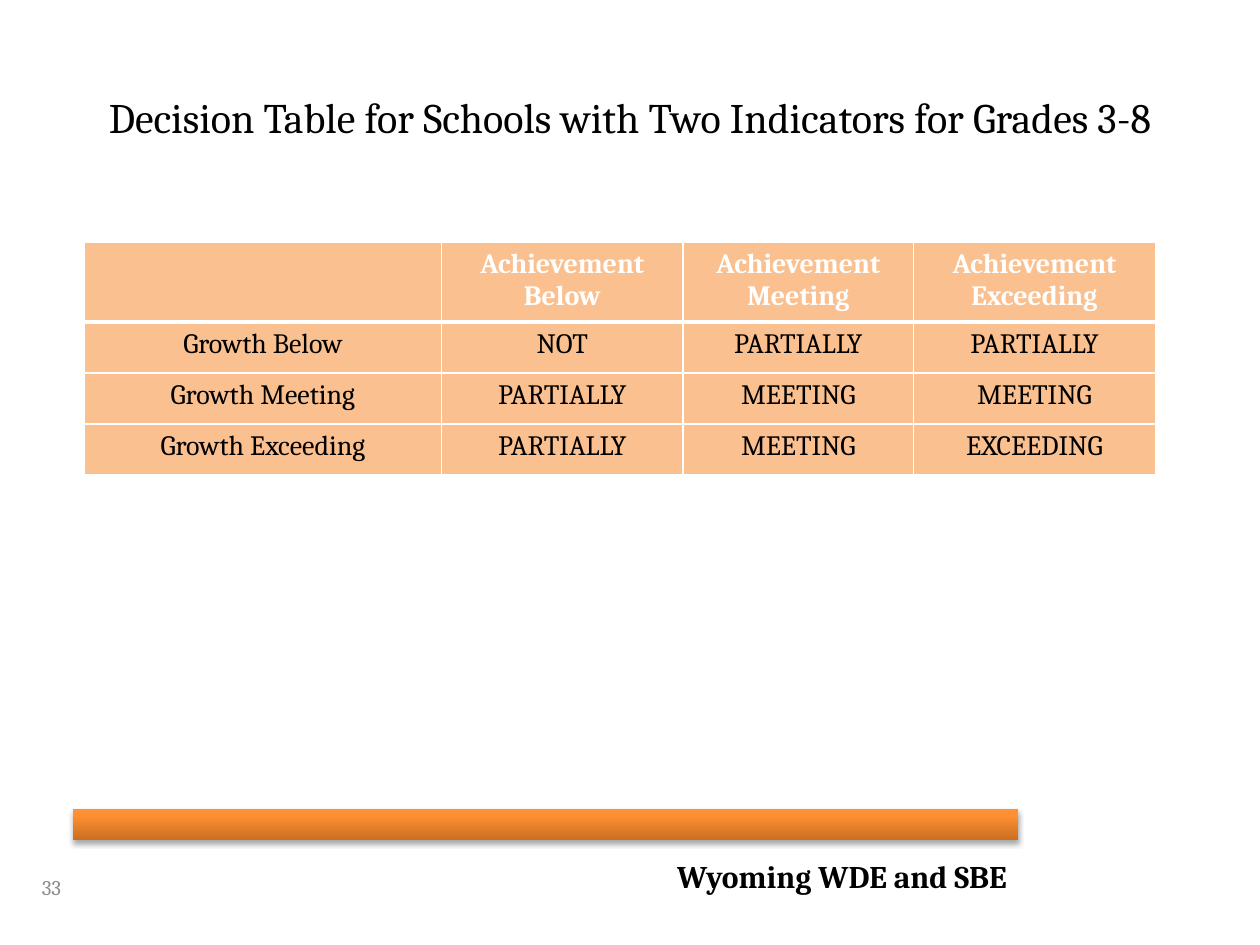
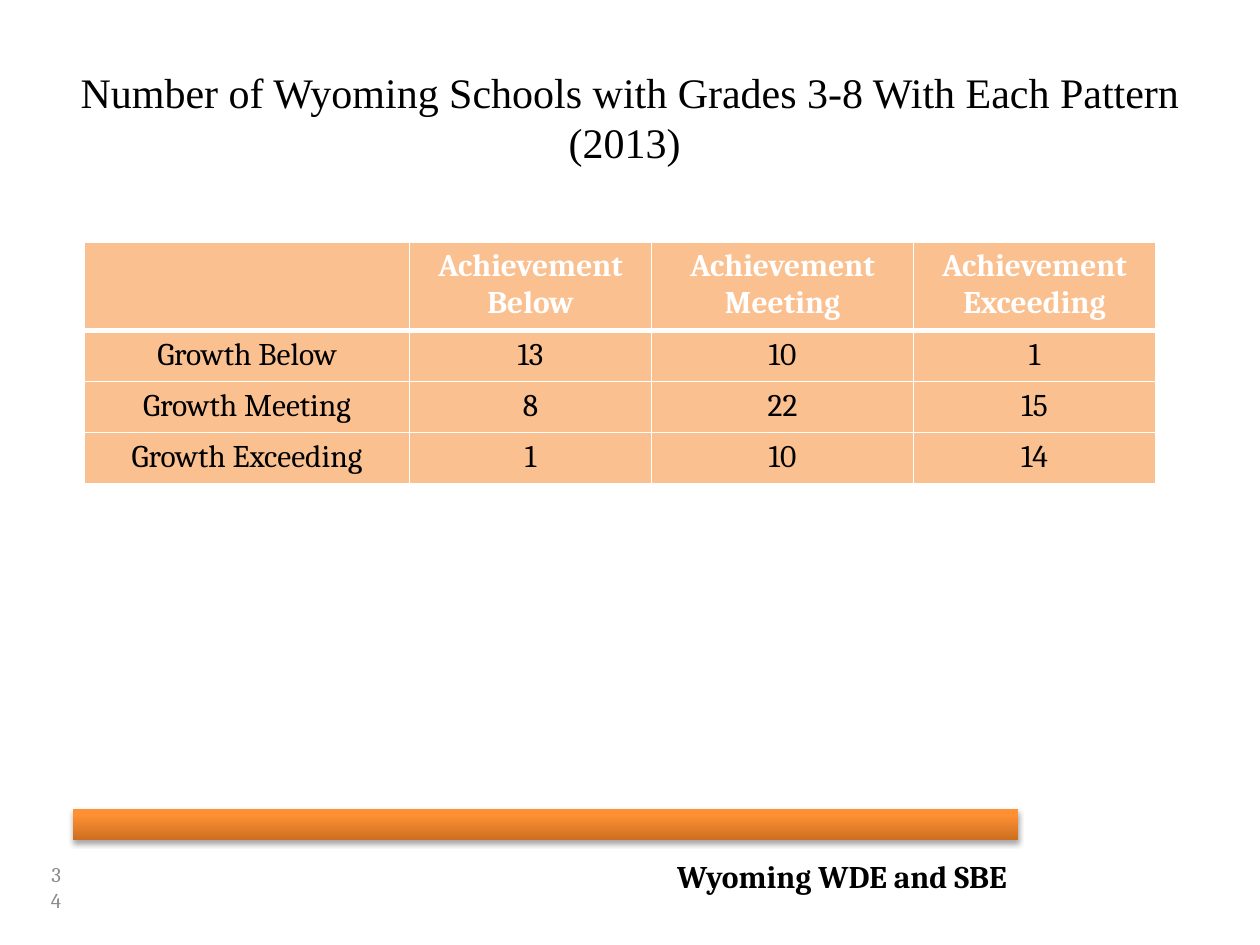
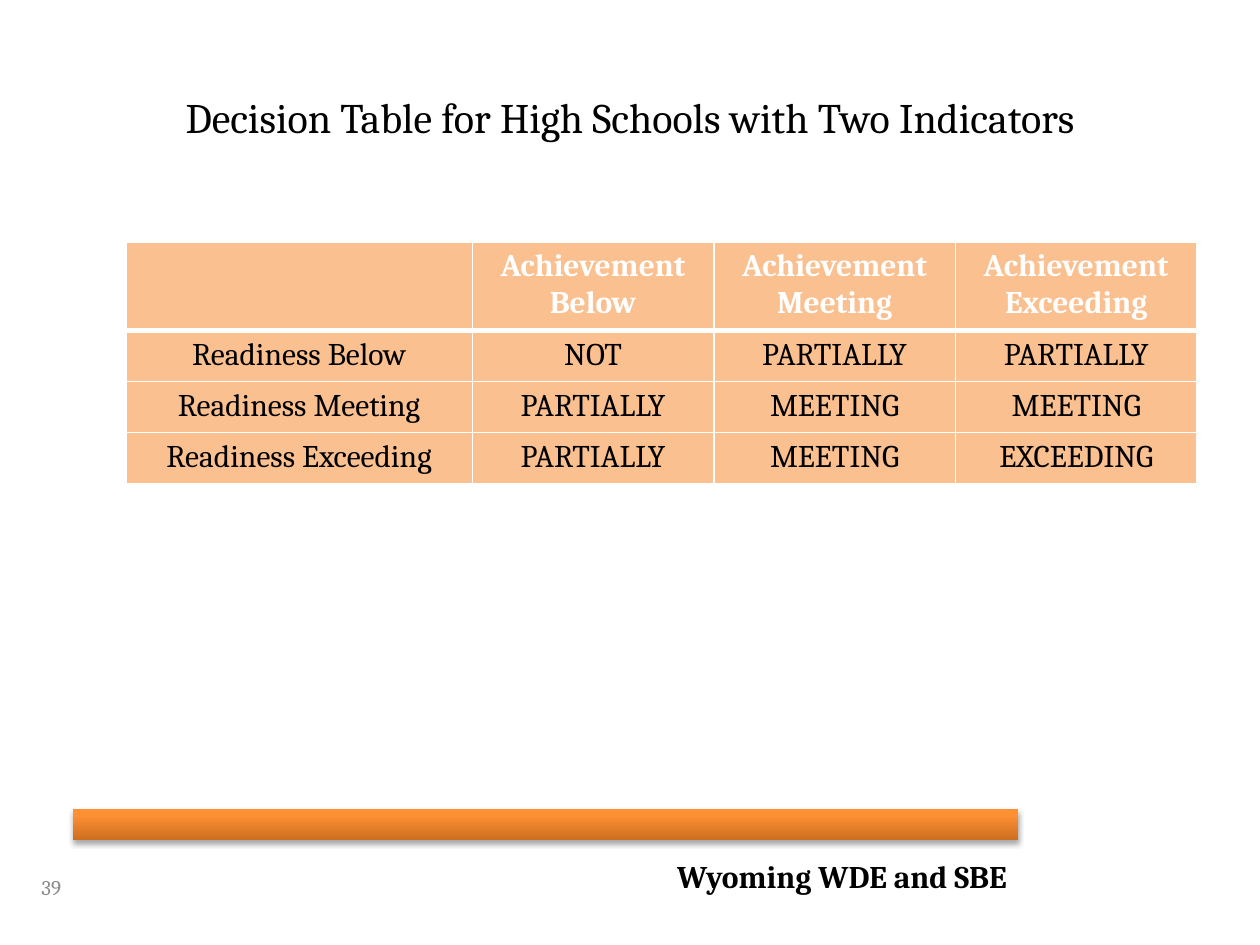
from pptx import Presentation
from pptx.dml.color import RGBColor
from pptx.enum.shapes import MSO_SHAPE as Preset
from pptx.enum.text import MSO_ANCHOR as Anchor, PP_ALIGN as Align
from pptx.oxml import parse_xml
from pptx.util import Cm, Pt

COLOURS = {
    "text": "000000", "number": "8C8C8C", "heading": "FFFFFF",
    "border": "FFFFFF", "cell": "FAC090",
    "bar_low": "CC6E20", "bar_mid": "FF9034", "bar_high": "FF9136",
    "shadow": "000000",
}
FONT = "Cambria"
FOOTER = "Wyoming WDE and SBE"
LEVELS = ["Below", "Meeting", "Exceeding"]
DECISIONS = [
    ["NOT", "PARTIALLY", "PARTIALLY"],
    ["PARTIALLY", "MEETING", "MEETING"],
    ["PARTIALLY", "MEETING", "EXCEEDING"],
]
SCHOOL_COUNTS = [["13", "10", "1"], ["8", "22", "15"], ["1", "10", "14"]]

SLIDES = [
    {"title": "Decision Table for Schools with Two Indicators for Grades 3-8",
     "title_font": FONT, "number": "33", "number_wraps": False,
     "indicator": "Growth", "results": DECISIONS, "left": 1.7,
     "meeting_width": 4.65, "heading_height": 1.55, "size": 16},
    {"title": "Number of Wyoming Schools with Grades 3-8 With Each Pattern (2013) ",
     "title_font": "Times New Roman", "number": "34", "number_wraps": True,
     "indicator": "Growth", "results": SCHOOL_COUNTS, "left": 1.7,
     "meeting_width": 5.29, "heading_height": 1.71, "size": 18},
    {"title": "Decision Table for High Schools with Two Indicators",
     "title_font": FONT, "number": "39", "number_wraps": True,
     "indicator": "Readiness", "results": DECISIONS, "left": 2.54,
     "meeting_width": 4.87, "heading_height": 1.71, "size": 18},
]

TABLE_TOP, TABLE_WIDTH = 4.88, 21.59
LEVEL_WIDTH, ROW_HEIGHT = 4.87, 1.03
DRAWING_NS = 'xmlns:a="http://schemas.openxmlformats.org/drawingml/2006/main"'


def write(frame, text, size, colour, align, font=FONT, bold=False):
    frame.text = text
    paragraph = frame.paragraphs[0]
    paragraph.alignment = align
    for run in paragraph.runs:
        run.font.name = font
        run.font.size = Pt(size)
        run.font.bold = bold
        run.font.color.rgb = RGBColor.from_string(COLOURS[colour])


def add_text(slide, box, *style, **options):
    frame = slide.shapes.add_textbox(*map(Cm, box)).text_frame
    frame.word_wrap = True
    frame.vertical_anchor = Anchor.MIDDLE
    write(frame, *style, **options)


def add_bar(slide):
    bar = slide.shapes.add_shape(Preset.RECTANGLE, Cm(1.47), Cm(16.3), Cm(19.05), Cm(0.64))
    stops = "".join(
        f'<a:gs pos="{position}"><a:srgbClr val="{COLOURS[colour]}"/></a:gs>'
        for position, colour in [(0, "bar_low"), (80000, "bar_mid"), (100000, "bar_high")])
    for xml in (
        f'<a:gradFill {DRAWING_NS}><a:gsLst>{stops}</a:gsLst><a:lin ang="16200000" scaled="0"/></a:gradFill>',
        f'<a:ln {DRAWING_NS}><a:noFill/></a:ln>',
        f'<a:effectLst {DRAWING_NS}><a:outerShdw blurRad="{Pt(3.1)}" dist="{Pt(1.8)}" dir="5400000" '
        f'rotWithShape="0"><a:srgbClr val="{COLOURS["shadow"]}"><a:alpha val="35000"/></a:srgbClr>'
        f'</a:outerShdw></a:effectLst>',
    ):
        bar._element.spPr.append(parse_xml(xml))


def add_number(slide, number, wraps):
    badge = slide.shapes.add_shape(Preset.OVAL, Cm(0.4), Cm(17.25), Cm(1.27), Cm(1.27))
    badge.shadow.inherit = False
    badge.fill.background()
    badge.line.fill.background()
    badge.text_frame.word_wrap = wraps
    badge.text_frame.vertical_anchor = Anchor.MIDDLE
    write(badge.text_frame, number, 12, "number", Align.RIGHT)


def style_cell(cell, row):
    widths = {"L": 1, "R": 1, "T": 3 if row == 1 else 1, "B": 3 if row == 0 else 1}
    for side, width in widths.items():
        cell._tc.get_or_add_tcPr().append(parse_xml(
            f'<a:ln{side} {DRAWING_NS} w="{Pt(width)}"><a:solidFill>'
            f'<a:srgbClr val="{COLOURS["border"]}"/></a:solidFill></a:ln{side}>'))
    cell.fill.solid()
    cell.fill.fore_color.rgb = RGBColor.from_string(COLOURS["cell"])


def add_results(slide, content):
    rows = [[""] + [f"Achievement {level}" for level in LEVELS]]
    rows += [[f"{content['indicator']} {level}"] + results
             for level, results in zip(LEVELS, content["results"])]
    middle = content["meeting_width"]
    label_width = TABLE_WIDTH - 2 * LEVEL_WIDTH - middle
    widths = [label_width, LEVEL_WIDTH, middle, LEVEL_WIDTH]
    heights = [content["heading_height"]] + [ROW_HEIGHT] * len(LEVELS)
    table = slide.shapes.add_table(
        len(rows), len(widths), Cm(content["left"]), Cm(TABLE_TOP),
        Cm(TABLE_WIDTH), Cm(sum(heights))).table
    table.horz_banding = False
    for column, width in zip(table.columns, widths):
        column.width = Cm(width)
    for r, (values, height) in enumerate(zip(rows, heights)):
        table.rows[r].height = Cm(height)
        for c, value in enumerate(values):
            cell = table.cell(r, c)
            style_cell(cell, r)
            write(cell.text_frame, value, content["size"],
                  "text" if r else "heading", Align.CENTER, bold=r == 0)


def main():
    deck = Presentation()
    deck.slide_width, deck.slide_height = Cm(25.4), Cm(19.05)
    for content in SLIDES:
        slide = deck.slides.add_slide(deck.slide_layouts[6])
        add_bar(slide)
        add_text(slide, (1.7, 17.15, 18.85, 1.02), FOOTER, 18, "text", Align.RIGHT, bold=True)
        add_text(slide, (1.27, 0.76, 22.86, 3.18), content["title"], 24, "text",
                 Align.CENTER, font=content["title_font"])
        add_number(slide, content["number"], content["number_wraps"])
        add_results(slide, content)
    deck.save("out.pptx")


if __name__ == "__main__":
    main()
